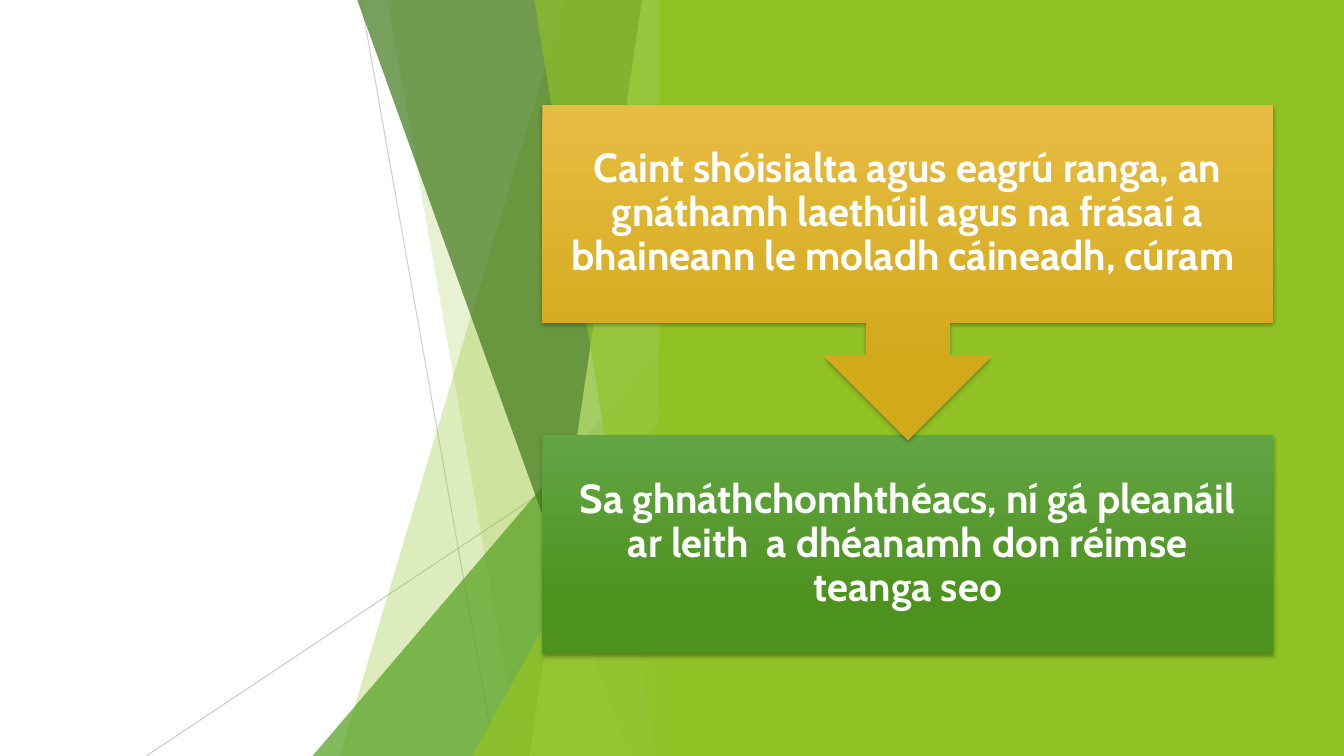
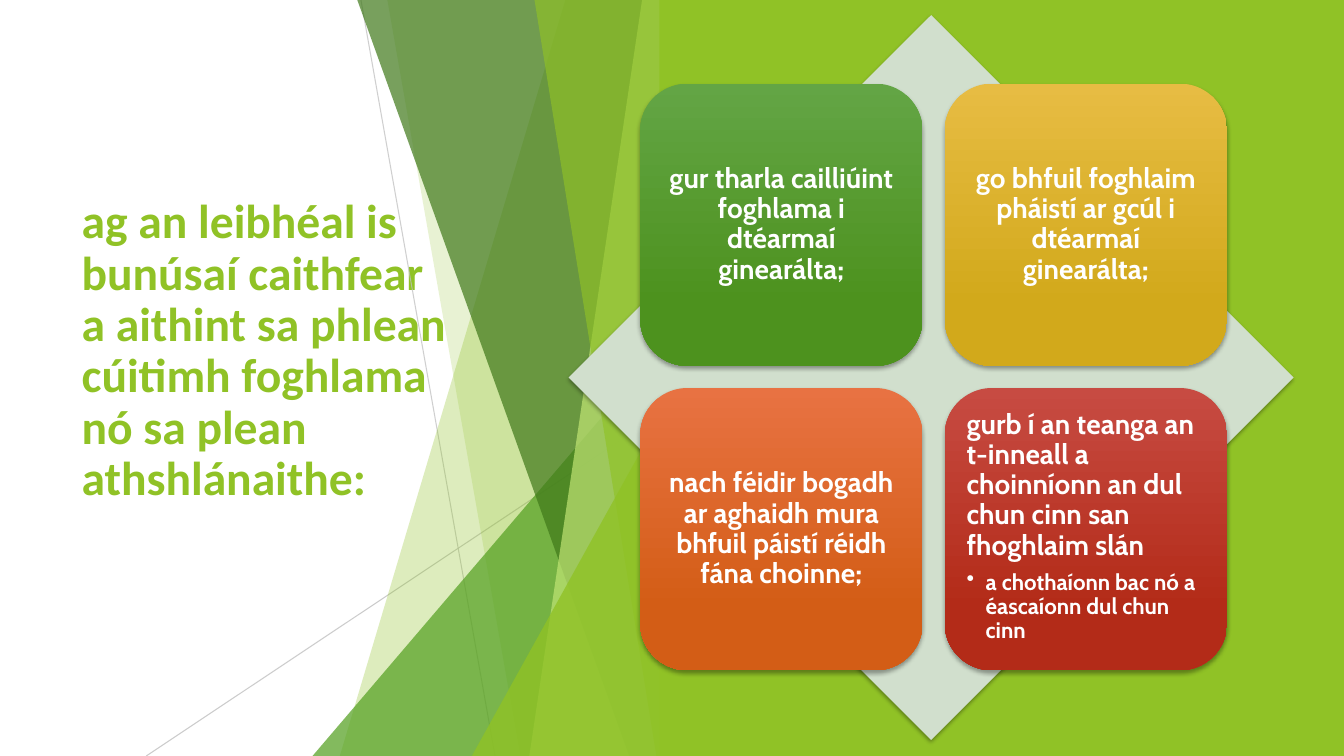
import pptx
import pptx.dml.color
import pptx.enum.dml
import pptx.enum.shapes
import pptx.enum.text
import pptx.oxml
import pptx.oxml.ns
import pptx.util
from lxml import etree

Inches = pptx.util.Inches
Pt = pptx.util.Pt
qn = pptx.oxml.ns.qn
SHAPES = pptx.enum.shapes.MSO_SHAPE
ALIGN = pptx.enum.text.PP_ALIGN
ANCHOR = pptx.enum.text.MSO_ANCHOR

WIDTH, HEIGHT = 13.33, 7.5
LIME, WHITE, GREY, PALE = "90C226", "FFFFFF", "BFBFBF", "D1DFCD"
LEAF, FOREST, LIGHT = "54A021", "3F7819", "C0E474"
GREEN = ("63A545", "4D921E")
GOLD = ("E7BC43", "D2A91B")
ORANGE = ("E87242", "D35D16")
RED = ("C74B42", "B32B18")
BODY_FONT, TITLE_FONT = "Cabin", "Calibri"
FACET_EDGE = 6.66
PANEL_LEFT = 6.54


def colour(value):
    """Turn a hex string into a colour."""
    return pptx.dml.color.RGBColor.from_string(value)


def set_opacity(shape, percent):
    """Make the colour of a shape or line partly transparent."""
    element = next(shape.element.spPr.iter(qn("a:srgbClr")))
    etree.SubElement(element, qn("a:alpha")).set("val", str(percent * 1000))


def fill_plain(shape, value, opacity=100):
    """Fill a shape with one colour, without outline or shadow."""
    shape.shadow.inherit = False
    shape.line.fill.background()
    shape.fill.solid()
    shape.fill.fore_color.rgb = colour(value)
    if opacity < 100:
        set_opacity(shape, opacity)


def fill_gradient(shape, values):
    """Fill a shape from a light top to a dark foot."""
    shape.shadow.inherit = False
    shape.line.fill.background()
    shape.fill.gradient()
    shape.fill.gradient_angle = 270
    for stop, value, position in zip(shape.fill.gradient_stops, values, (0, 0.78)):
        stop.color.rgb = colour(value)
        stop.position = position


def add_shadow(shape):
    """Give a shape a soft shadow below it."""
    effects = shape.element.spPr.find(qn("a:effectLst"))
    shadow = etree.SubElement(effects, qn("a:outerShdw"), blurRad=str(Pt(3)),
                              dist=str(Pt(2)), dir="5400000", rotWithShape="0")
    black = etree.SubElement(shadow, qn("a:srgbClr"), val="000000")
    etree.SubElement(black, qn("a:alpha"), val="35000")


def add_box(slide, kind, box):
    """Add a preset shape in a box given in inches."""
    return slide.shapes.add_shape(kind, *map(Inches, box))


def add_run(paragraph, text, size, font=BODY_FONT, value=WHITE):
    """Write one bold run."""
    paragraph.line_spacing = 0.9
    run = paragraph.add_run()
    run.text = text
    run.font.size = Pt(size)
    run.font.name = font
    run.font.bold = True
    run.font.color.rgb = colour(value)


def add_card(slide, kind, box, values, text, size, margin):
    """Add a shaded card with centred text and return it."""
    card = add_box(slide, kind, box)
    fill_gradient(card, values)
    add_shadow(card)
    frame = card.text_frame
    frame.word_wrap = True
    frame.vertical_anchor = ANCHOR.MIDDLE
    frame.margin_left = frame.margin_right = Inches(margin)
    frame.margin_top = frame.margin_bottom = Inches(margin)
    frame.paragraphs[0].alignment = ALIGN.CENTER
    add_run(frame.paragraphs[0], text, size)
    return card


def add_hairline(slide, start, end, opacity):
    """Draw a thin grey line between two points."""
    line = slide.shapes.add_connector(
        pptx.enum.shapes.MSO_CONNECTOR.STRAIGHT, *map(Inches, start + end))
    line.line.width = Pt(0.75)
    line.line.color.rgb = colour(GREY)
    set_opacity(line, opacity)
    etree.SubElement(line.element.spPr, qn("a:effectLst"))


def add_facet(slide, right, top_reach, foot_reach, value, opacity):
    """Draw a full-height facet reaching left from the right edge."""
    builder = slide.shapes.build_freeform(
        Inches(right - top_reach), Inches(-0.01), scale=1.0)
    corners = ((right, -0.01), (right, HEIGHT), (right - foot_reach, HEIGHT))
    builder.add_line_segments([tuple(map(Inches, corner)) for corner in corners])
    fill_plain(builder.convert_to_shape(), value, opacity)


def add_wedge(slide, right, width, height, value, opacity):
    """Draw a right-angled triangle in the lower right corner."""
    wedge = add_box(slide, SHAPES.ISOSCELES_TRIANGLE,
                    (right - width, HEIGHT - height, width, height))
    wedge.adjustments[0] = 1
    fill_plain(wedge, value, opacity)


def add_backdrop(slide, right=FACET_EDGE):
    """Draw the facets left of the edge and the lime panel over them."""
    add_hairline(slide, (right - 3.08, 0), (right - 1.75, HEIGHT), 75)
    add_hairline(slide, (right, 4.03), (right - 5.21, HEIGHT), 80)
    add_facet(slide, right, 1.05, 3.29, LIME, 30)
    add_facet(slide, right, 2.82, 1.5, LIME, 20)
    add_wedge(slide, right, 3.56, 4.17, LEAF, 72)
    add_facet(slide, right, 3.12, 0.42, FOREST, 70)
    add_facet(slide, right, 0.29, 1.41, LIGHT, 70)
    add_facet(slide, right, 1.36, 0.15, LIME, 65)
    add_wedge(slide, right, 1.98, 3.57, LIME, 80)
    panel = add_box(slide, SHAPES.RECTANGLE,
                    (PANEL_LEFT, 0, WIDTH - PANEL_LEFT, HEIGHT))
    fill_plain(panel, LIME)


def add_title(slide, text, box):
    """Place and write the slide title."""
    title = slide.shapes.title
    title.left, title.top, title.width, title.height = map(Inches, box)
    frame = title.text_frame
    frame.word_wrap = True
    frame.auto_size = pptx.enum.text.MSO_AUTO_SIZE.NONE
    frame.vertical_anchor = ANCHOR.MIDDLE
    frame.paragraphs[0].alignment = ALIGN.LEFT
    add_run(frame.paragraphs[0], text, 34, TITLE_FONT, LIME)


def add_bullet(card, text):
    """Set a card from the top left and add a smaller bullet below."""
    frame = card.text_frame
    frame.vertical_anchor = ANCHOR.TOP
    frame.paragraphs[0].alignment = ALIGN.LEFT
    frame.paragraphs[0].space_after = Pt(7)
    paragraph = frame.add_paragraph()
    paragraph.alignment = ALIGN.LEFT
    add_run(paragraph, text, 16)
    properties = paragraph._p.get_or_add_pPr()
    properties.set("marL", str(Inches(0.19)))
    properties.set("indent", str(Inches(-0.19)))
    etree.SubElement(properties, qn("a:buChar"), char="•")


def add_steps(slide, box, first, second):
    """Stack two cards, the upper one pointing at the lower."""
    left, top, width, height = box
    step_height, callout_height = 2.16, 3.32
    add_card(slide, SHAPES.RECTANGLE,
             (left, top + height - step_height, width, step_height),
             GREEN, second, 29, 0.23)
    add_card(slide, SHAPES.DOWN_ARROW_CALLOUT, (left, top, width, callout_height),
             GOLD, first, 29, 0.23)


def add_matrix(slide, box, texts, detail):
    """Lay four rounded cards in a grid over a diamond."""
    left, top = box[:2]
    diamond = add_box(slide, SHAPES.DIAMOND, box)
    fill_plain(diamond, PALE)
    add_shadow(diamond)
    side, pitch = 2.8, 3.02
    for index, (text, values) in enumerate(zip(texts, (GREEN, GOLD, ORANGE, RED))):
        row, column = divmod(index, 2)
        card = add_card(slide, SHAPES.ROUNDED_RECTANGLE,
                        (left + 0.71 + column * pitch, top + 0.68 + row * pitch,
                         side, side), values, text, 20, 0.08)
    add_bullet(card, detail)


def build_steps_slide(presentation):
    """Build the slide with the two steps."""
    slide = presentation.slides.add_slide(presentation.slide_layouts[6])
    add_backdrop(slide)
    add_steps(
        slide, (5.38, 1.04, 7.25, 5.44),
        "Caint shóisialta agus eagrú ranga, an gnáthamh laethúil agus na "
        "frásaí a bhaineann le moladh cáineadh, cúram ",
        "Sa ghnáthchomhthéacs, ní gá pleanáil ar leith  a dhéanamh don "
        "réimse teanga seo")


def build_matrix_slide(presentation):
    """Build the slide with the title and four cards."""
    slide = presentation.slides.add_slide(presentation.slide_layouts[5])
    add_title(
        slide, "ag an leibhéal is bunúsaí caithfear a aithint sa phlean "
        "cúitimh foghlama nó sa plean athshlánaithe:", (0.71, 1.51, 3.88, 3.96))
    add_backdrop(slide)
    add_matrix(
        slide, (5.64, 0.15, 7.19, 7.19),
        ("gur tharla cailliúint foghlama i dtéarmaí ginearálta;",
         "go bhfuil foghlaim pháistí ar gcúl i dtéarmaí ginearálta;",
         "nach féidir bogadh ar aghaidh mura bhfuil páistí réidh fána choinne;",
         "gurb í an teanga an t-inneall a choinníonn an dul chun cinn san "
         "fhoghlaim slán"),
        "a chothaíonn bac nó a éascaíonn dul chun cinn")


def main():
    """Build and save the presentation."""
    presentation = pptx.Presentation()
    presentation.slide_width = Inches(WIDTH)
    presentation.slide_height = Inches(HEIGHT)
    build_steps_slide(presentation)
    build_matrix_slide(presentation)
    presentation.save("out.pptx")


if __name__ == "__main__":
    main()
